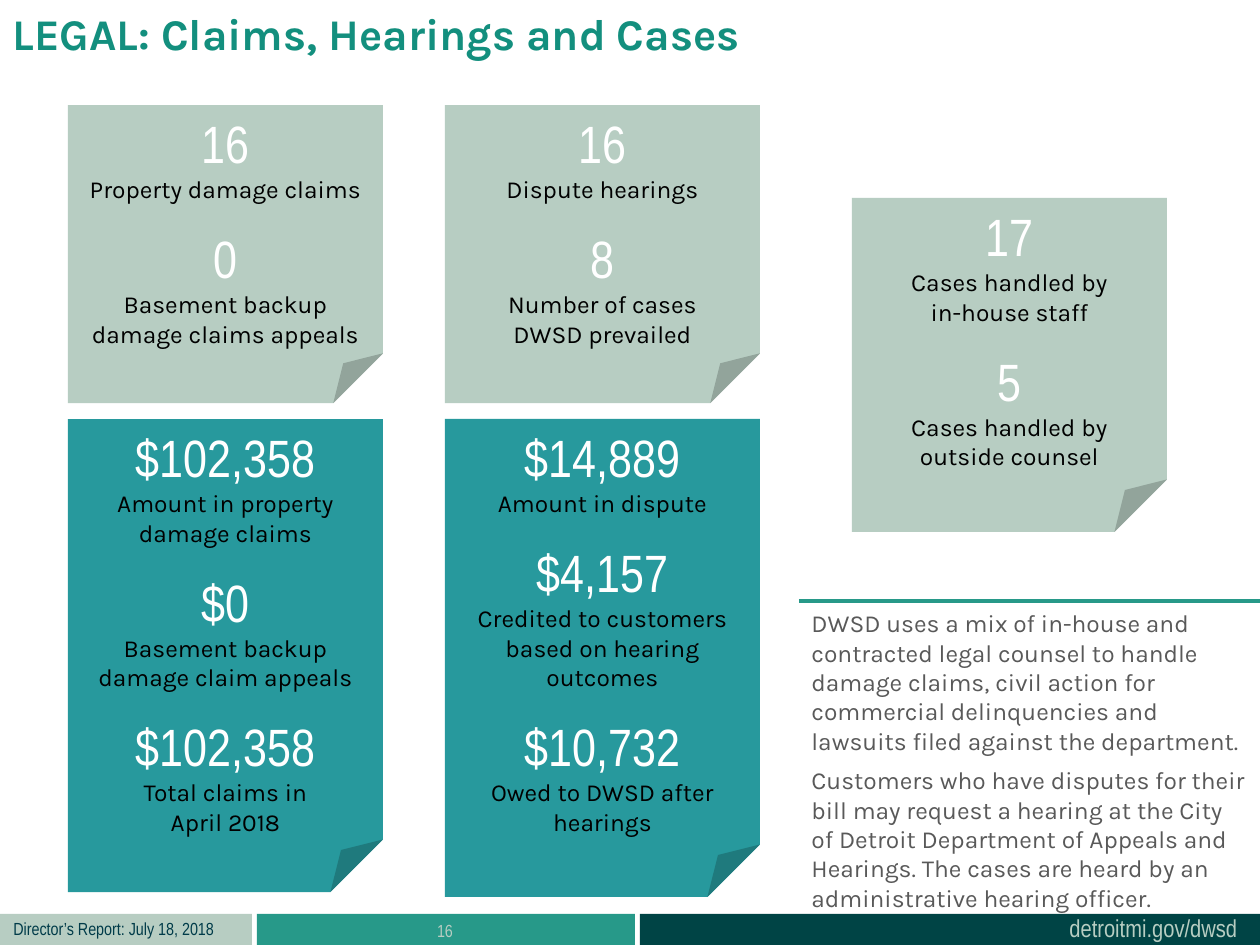
from pptx import Presentation
from pptx.dml.color import RGBColor
from pptx.enum.shapes import MSO_CONNECTOR, MSO_SHAPE
from pptx.enum.text import MSO_ANCHOR, MSO_AUTO_SIZE, PP_ALIGN
from pptx.oxml.ns import qn
from pptx.util import Emu, Pt
from lxml import etree

SAGE = RGBColor(0xB7, 0xCD, 0xC2)
TEAL = RGBColor(0x27, 0x99, 0x9D)
GREEN = RGBColor(0x27, 0x99, 0x89)
DEEP_GREEN = RGBColor(0x00, 0x44, 0x45)
NAVY = RGBColor(0x00, 0x3B, 0x49)
TITLE_GREEN = RGBColor(0x13, 0x8F, 0x7E)
GRAY = RGBColor(0x59, 0x59, 0x59)
WHITE = RGBColor(0xFF, 0xFF, 0xFF)
BLACK = RGBColor(0, 0, 0)
NARROW, KARLA = "Arial Narrow", "Karla"
PX = 914400 / 126


def px(*lengths):
    return [Emu(round(length * PX)) for length in lengths]


def write(paragraph, text, font, size, color, align=PP_ALIGN.LEFT):
    paragraph.text = text
    paragraph.alignment = align
    for run in paragraph.runs:
        run.font.name = font
        run.font.size = Pt(size)
        run.font.color.rgb = color


prs = Presentation()
prs.slide_width, prs.slide_height = px(1260, 945)
slide = prs.slides.add_slide(prs.slide_layouts[5])
shapes = slide.shapes

# Title
title = shapes.title
title.left, title.top, title.width, title.height = px(0, 0, 956, 97)
title.text_frame.auto_size = MSO_AUTO_SIZE.NONE
title.text_frame.vertical_anchor = MSO_ANCHOR.TOP
write(title.text_frame.paragraphs[0], "LEGAL: Claims, Hearings and Cases", KARLA, 25, TITLE_GREEN)
title.text_frame.paragraphs[0].runs[0].font.bold = True

# Footer bands
for left, width, color in [(0, 252, SAGE), (257, 378, GREEN), (640, 620, DEEP_GREEN)]:
    band = shapes.add_shape(MSO_SHAPE.RECTANGLE, *px(left, 914, width, 31))
    band.shadow.inherit = False
    band.fill.solid()
    band.fill.fore_color.rgb = color
    band.line.fill.background()

# Footer texts and explanations
texts = [
    (1057, 907, 195, 43, False, "detroitmi.gov/dwsd", NARROW, 14, SAGE, PP_ALIGN.LEFT),
    (1, 912, 227, 34, False, "Director’s Report: July 18, 2018", NARROW, 10, NAVY, PP_ALIGN.LEFT),
    (256, 914, 378, 31, True, "16", NARROW, 10, SAGE, PP_ALIGN.CENTER),
    (799, 602, 461, 161, True,
     "DWSD uses a mix of in-house and contracted legal counsel to handle damage claims, "
     "civil action for commercial delinquencies and lawsuits filed against the department.",
     KARLA, 14, GRAY, PP_ALIGN.LEFT),
    (799, 759, 461, 161, True,
     "Customers who have disputes for their bill may request a hearing at the City of Detroit "
     "Department of Appeals and Hearings. The cases are heard by an administrative hearing officer.",
     KARLA, 14, GRAY, PP_ALIGN.LEFT),
]
for left, top, width, height, wrap, text, font, size, color, align in texts:
    frame = shapes.add_textbox(*px(left, top, width, height)).text_frame
    frame.word_wrap = wrap
    write(frame.paragraphs[0], text, font, size, color, align)

# Rule above the explanations
rule = shapes.add_connector(MSO_CONNECTOR.STRAIGHT, *px(799, 601, 1260, 601))
rule.line.color.rgb = GREEN
rule.line.width = Pt(2.25)
etree.SubElement(rule._element.spPr, qn("a:effectLst"))

# Note cards: figure and label pairs
cards = [
    (68, 105, 298, SAGE, [
        ("16", "Property damage claims"),
        ("0", "Basement backup\ndamage claims appeals")]),
    (68, 419, 473, TEAL, [
        ("$102,358", "Amount in property\ndamage claims"),
        ("$0", "Basement backup damage claim appeals"),
        ("$102,358", "Total claims in\nApril 2018")]),
    (445, 105, 298, SAGE, [
        ("16", "Dispute hearings"),
        ("8", "Number of cases\nDWSD prevailed")]),
    (445, 419, 478, TEAL, [
        ("$14,889", "Amount in dispute"),
        ("$4,157", "Credited to customers based on hearing outcomes"),
        ("$10,732", "Owed to DWSD after hearings")]),
    (852, 198, 334, SAGE, [
        ("17", "Cases handled by\nin-house staff"),
        ("5", "Cases handled by\noutside counsel")]),
]
for left, top, height, color, facts in cards:
    card = shapes.add_shape(MSO_SHAPE.FOLDED_CORNER, *px(left, top, 315, height))
    card.shadow.inherit = False
    card.fill.solid()
    card.fill.fore_color.rgb = color
    card.line.fill.background()
    frame = card.text_frame
    frame.word_wrap = True
    frame.vertical_anchor = MSO_ANCHOR.TOP
    for index, (figure, label) in enumerate(facts):
        paragraph = frame.add_paragraph() if index else frame.paragraphs[0]
        if index:
            paragraph.space_before = Pt(13)
        write(paragraph, figure, NARROW, 30, WHITE, PP_ALIGN.CENTER)
        write(frame.add_paragraph(), label, KARLA, 14, BLACK, PP_ALIGN.CENTER)

prs.save("out.pptx")
